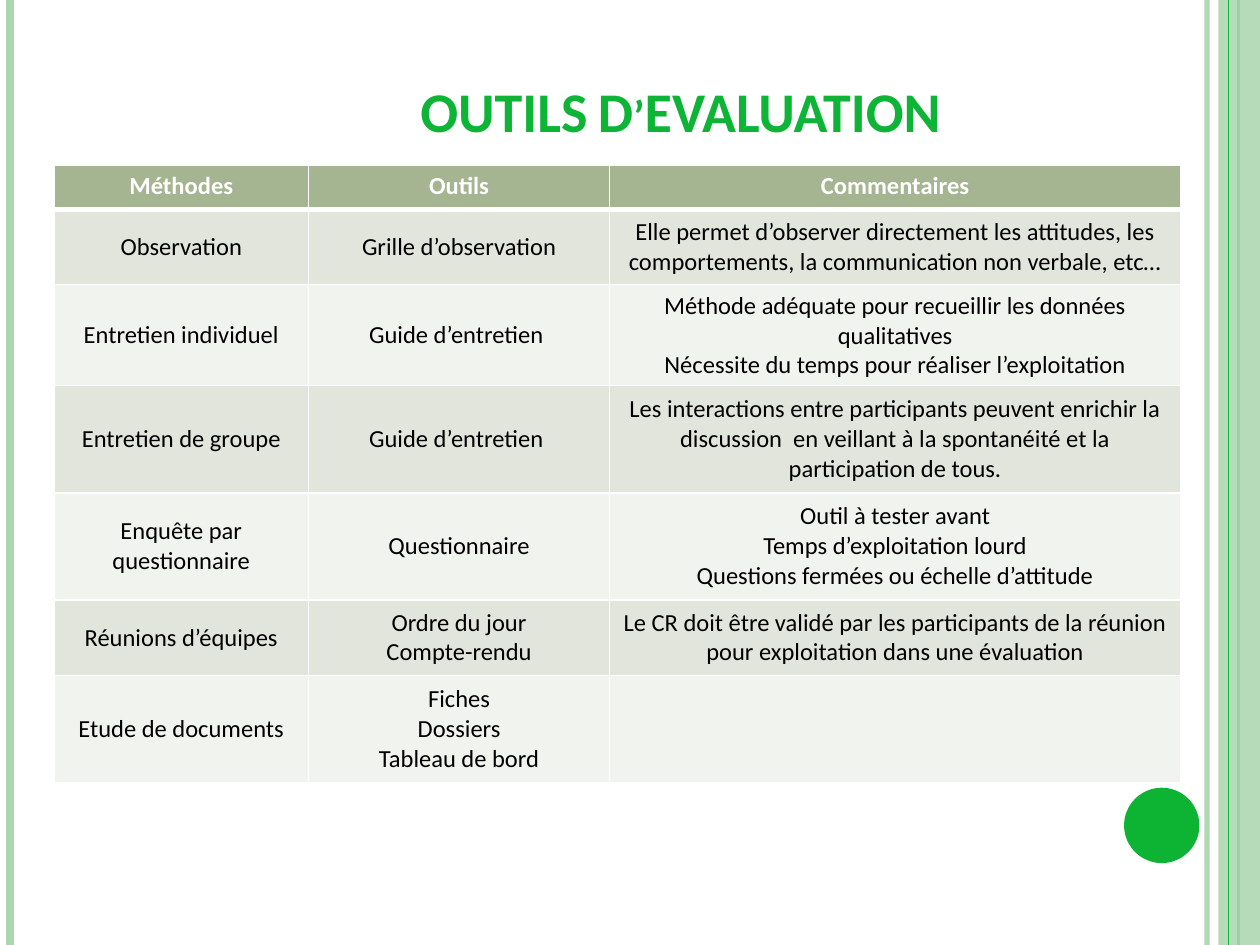
from dataclasses import dataclass

from lxml import etree
from pptx import Presentation
from pptx.dml.color import RGBColor
from pptx.enum.shapes import MSO_CONNECTOR, MSO_SHAPE
from pptx.enum.text import MSO_ANCHOR, PP_ALIGN
from pptx.oxml.ns import qn
from pptx.util import Cm, Pt

STRAIGHT = MSO_CONNECTOR.STRAIGHT
RECTANGLE, OVAL = MSO_SHAPE.RECTANGLE, MSO_SHAPE.OVAL
TOP, MIDDLE, BOTTOM = MSO_ANCHOR.TOP, MSO_ANCHOR.MIDDLE, MSO_ANCHOR.BOTTOM
CENTER = PP_ALIGN.CENTER


@dataclass(frozen=True)
class Theme:
    font: str = "Calibri"
    green: str = "0DB434"
    pale_green: str = "ABD6AE"
    title: str = "0DB435"
    header: str = "A5B592"
    bands: tuple[str, str] = ("E1E5DC", "F0F3EE")
    white: str = "FFFFFF"
    black: str = "000000"
    title_size: float = 32
    table_size: float = 14
    border: float = 1
    header_border: float = 3


@dataclass(frozen=True)
class Stripe:
    left: float
    color: str
    weight: float
    opacity: int = 100


@dataclass(frozen=True)
class Panel:
    kind: MSO_SHAPE
    left: float
    top: float
    width: float
    height: float
    color: str
    opacity: int = 100


@dataclass(frozen=True)
class Method:
    name: str
    tools: str
    comments: str
    height: float


THEME = Theme()
PAGE_WIDTH, PAGE_HEIGHT = 25.4, 19.05

DECORATION = [
    Stripe(24.33, THEME.pale_green, 3, 93),
    Stripe(0.2, THEME.pale_green, 4.5),
    Stripe(24.97, THEME.green, 1.5),
    Panel(RECTANGLE, 24.56, 0, 0.84, PAGE_HEIGHT, THEME.pale_green, 87),
    Stripe(24.77, THEME.green, 0.75),
    Panel(OVAL, 22.66, 15.88, 1.52, 1.52, THEME.green),
]

COLUMN_WIDTHS = [5.13, 6.07, 11.51]
METHODS = [
    Method("Méthodes", "Outils", "Commentaires", 0.89),
    Method("Observation", "Grille d’observation",
           "Elle permet d’observer directement les attitudes, les comportements, "
           "la communication non verbale, etc…", 1.52),
    Method("Entretien individuel", "Guide d’entretien ",
           "Méthode adéquate pour recueillir les données qualitatives\n"
           "Nécessite du temps pour réaliser l’exploitation", 1.52),
    Method("Entretien de groupe", "Guide d’entretien ",
           "Les interactions entre participants peuvent enrichir la discussion  "
           "en veillant à la spontanéité et la participation de tous.", 2.16),
    Method("Enquête par questionnaire", "Questionnaire",
           "Outil à tester avant\nTemps d’exploitation lourd\n"
           "Questions fermées ou échelle d’attitude", 2.16),
    Method("Réunions d’équipes", "Ordre du jour\nCompte-rendu",
           "Le CR doit être validé par les participants de la réunion "
           "pour exploitation dans une évaluation", 1.52),
    Method("Etude de documents", "Fiches\nDossiers\nTableau de bord", "", 2.16),
]


def rgb(color: str) -> RGBColor:
    return RGBColor.from_string(color)


def set_opacity(element, opacity: int) -> None:
    if opacity < 100:
        color = next(element.iter(qn("a:srgbClr")))
        etree.SubElement(color, qn("a:alpha"), val=str(opacity * 1000))


def write_text(frame, text: str, size: float, color: str, bold: bool) -> None:
    frame.text = text
    for para in frame.paragraphs:
        para.alignment = CENTER
        for span in para.runs:
            span.font.name = THEME.font
            span.font.size = Pt(size)
            span.font.bold = bold
            span.font.color.rgb = rgb(color)


def draw_stripe(page, stripe: Stripe) -> None:
    left = Cm(stripe.left)
    line = page.shapes.add_connector(STRAIGHT, left, 0, left, Cm(PAGE_HEIGHT))
    line.line.color.rgb = rgb(stripe.color)
    line.line.width = Pt(stripe.weight)
    properties = line._element.spPr
    set_opacity(properties, stripe.opacity)
    etree.SubElement(properties, qn("a:effectLst"))


def draw_panel(page, panel: Panel) -> None:
    shape = page.shapes.add_shape(panel.kind, Cm(panel.left), Cm(panel.top),
                                  Cm(panel.width), Cm(panel.height))
    shape.shadow.inherit = False
    shape.fill.solid()
    shape.fill.fore_color.rgb = rgb(panel.color)
    shape.line.fill.background()
    set_opacity(shape._element.spPr, panel.opacity)


def draw_title(page, text: str) -> None:
    box = page.shapes.add_textbox(Cm(2.9), Cm(0.05), Cm(21.64), Cm(2.97))
    frame = box.text_frame
    frame.word_wrap = True
    frame.vertical_anchor = BOTTOM
    write_text(frame, text, THEME.title_size, THEME.title, True)
    frame.paragraphs[0].runs[0].font._element.set("cap", "small")


def set_borders(cell, top: float, bottom: float) -> None:
    properties = cell._tc.get_or_add_tcPr()
    weights = {"L": THEME.border, "R": THEME.border, "T": top, "B": bottom}
    for side, weight in weights.items():
        line = etree.SubElement(properties, qn(f"a:ln{side}"), w=str(Pt(weight)))
        fill = etree.SubElement(line, qn("a:solidFill"))
        etree.SubElement(fill, qn("a:srgbClr"), val=THEME.white)


def draw_table(page, methods: list[Method]) -> None:
    frame = page.shapes.add_table(
        len(methods), len(COLUMN_WIDTHS), Cm(1.09), Cm(3.33),
        Cm(sum(COLUMN_WIDTHS)), Cm(sum(method.height for method in methods)))
    table = frame.table
    for column, width in zip(table.columns, COLUMN_WIDTHS):
        column.width = Cm(width)
    for index, method in enumerate(methods):
        table.rows[index].height = Cm(method.height)
        is_header = index == 0
        background = THEME.header if is_header else THEME.bands[(index - 1) % 2]
        color = THEME.white if is_header else THEME.black
        top = THEME.header_border if index == 1 else THEME.border
        bottom = THEME.header_border if is_header else THEME.border
        texts = (method.name, method.tools, method.comments)
        for cell, text in zip(table.rows[index].cells, texts):
            set_borders(cell, top, bottom)
            cell.fill.solid()
            cell.fill.fore_color.rgb = rgb(background)
            cell.vertical_anchor = TOP if is_header else MIDDLE
            write_text(cell.text_frame, text, THEME.table_size, color, is_header)


def main() -> None:
    deck = Presentation()
    deck.slide_width, deck.slide_height = Cm(PAGE_WIDTH), Cm(PAGE_HEIGHT)
    page = deck.slides.add_slide(deck.slide_layouts[6])
    for item in DECORATION:
        if isinstance(item, Stripe):
            draw_stripe(page, item)
        else:
            draw_panel(page, item)
    draw_title(page, "OUTILS D’EVALUATION")
    draw_table(page, METHODS)
    deck.save("out.pptx")


if __name__ == "__main__":
    main()
